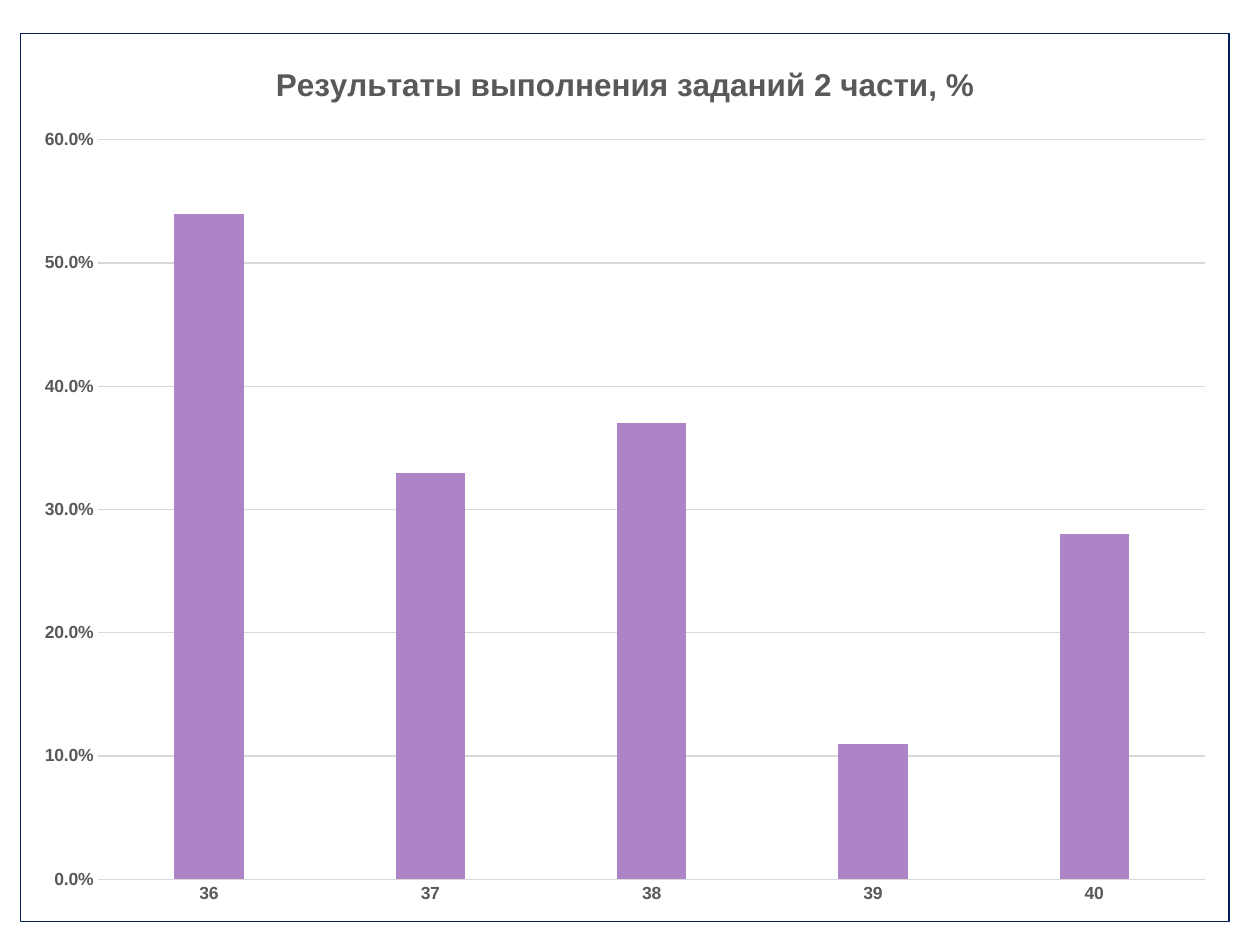
from dataclasses import dataclass
from typing import NamedTuple

from pptx import Presentation
from pptx.chart.axis import CategoryAxis, ValueAxis
from pptx.chart.chart import Chart
from pptx.chart.data import CategoryChartData
from pptx.dml.color import RGBColor
from pptx.dml.line import LineFormat
from pptx.enum.chart import XL_CHART_TYPE, XL_TICK_MARK
from pptx.oxml import parse_xml
from pptx.oxml.ns import nsdecls, qn
from pptx.text.text import Font
from pptx.util import Inches, Pt


@dataclass(frozen=True)
class Theme:
    face: str = "Arial"
    text: str = "595959"
    grid: str = "D9D9D9"
    bar: str = "AD84C6"
    frame: str = "002060"
    head: int = 18
    label: int = 10
    line: float = 0.75


class Task(NamedTuple):
    number: str
    score: float


THEME = Theme()
TITLE = "Результаты выполнения заданий 2 части, %"
TASKS = [
    Task("36", 0.54),
    Task("37", 0.33),
    Task("38", 0.37),
    Task("39", 0.11),
    Task("40", 0.28),
]


def style(font: Font, size: int) -> None:
    font.name = THEME.face
    font.size = Pt(size)
    font.bold = True
    font.color.rgb = RGBColor.from_string(THEME.text)


def tune(axis: CategoryAxis | ValueAxis) -> None:
    axis.major_tick_mark = axis.minor_tick_mark = XL_TICK_MARK.NONE
    style(axis.tick_labels.font, THEME.label)


def rule(line: LineFormat) -> None:
    line.color.rgb = RGBColor.from_string(THEME.grid)
    line.width = Pt(THEME.line)


def border(chart: Chart) -> None:
    """Outline the whole chart area."""
    props = parse_xml(
        f'<c:spPr {nsdecls("c", "a")}><a:noFill/>'
        f'<a:ln w="{Pt(THEME.line)}"><a:solidFill>'
        f'<a:srgbClr val="{THEME.frame}"/></a:solidFill></a:ln></c:spPr>'
    )
    chart.element.find(qn("c:chart")).addnext(props)


def main() -> None:
    deck = Presentation()
    deck.slide_width, deck.slide_height = Inches(10), Inches(7.5)
    slide = deck.slides.add_slide(deck.slide_layouts[6])

    # Chart data
    data = CategoryChartData(number_format="0.0%")
    data.categories = [task.number for task in TASKS]
    data.add_series("Series 1", [task.score for task in TASKS])
    chart = slide.shapes.add_chart(
        XL_CHART_TYPE.COLUMN_CLUSTERED,
        Inches(0.16), Inches(0.26), Inches(9.6), Inches(7.06), data,
    ).chart
    chart.has_legend = False
    chart.font.name = THEME.face
    chart.font.size = Pt(THEME.label)

    # Title
    frame = chart.chart_title.text_frame
    frame.text = TITLE
    style(frame.paragraphs[0].font, THEME.head)
    chart.chart_title.include_in_layout = False

    # Columns
    plot = chart.plots[0]
    plot.vary_by_categories = False
    plot.gap_width, plot.overlap = 219, -27
    fill = plot.series[0].format.fill
    fill.solid()
    fill.fore_color.rgb = RGBColor.from_string(THEME.bar)

    # Axes and grid
    cats, vals = chart.category_axis, chart.value_axis
    tune(cats)
    tune(vals)
    rule(cats.format.line)
    vals.format.line.fill.background()
    rule(vals.major_gridlines.format.line)
    vals.minimum_scale, vals.maximum_scale, vals.major_unit = 0, 0.6, 0.1
    vals.tick_labels.number_format = "0.0%"
    vals.tick_labels.number_format_is_linked = False

    border(chart)
    deck.save("out.pptx")


if __name__ == "__main__":
    main()
